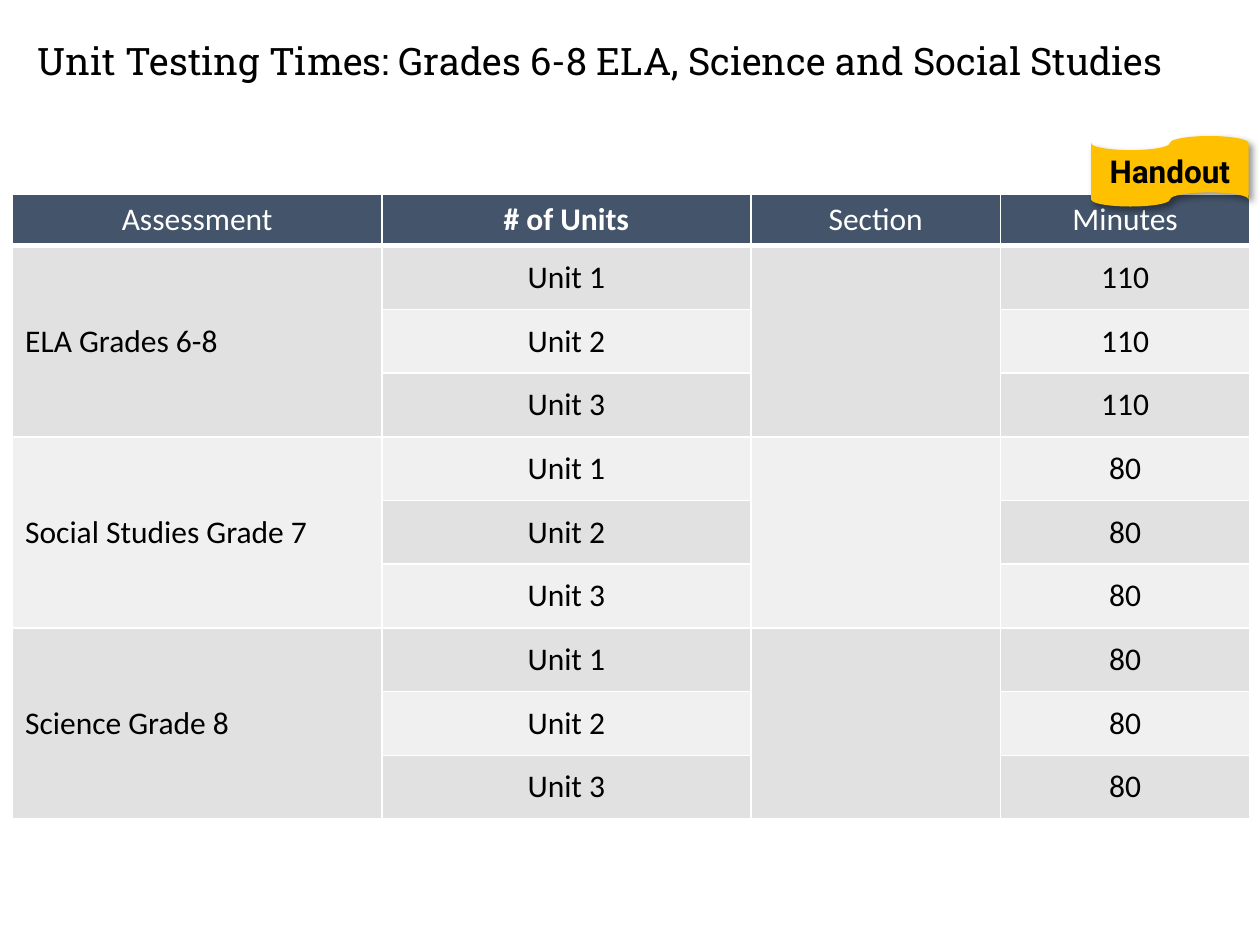
from lxml import etree
from pptx import Presentation
from pptx.dml.color import RGBColor
from pptx.enum import shapes, text
from pptx.oxml import ns
from pptx.util import Inches, Pt

BLACK, WHITE = "000000", "FFFFFF"
NAVY, AMBER = "44546A", "FFC000"
BANDS = ("E1E1E1", "F0F0F0")
CENTER, LEFT = text.PP_ALIGN.CENTER, text.PP_ALIGN.LEFT

HEADINGS = ("Assessment", "# of Units", "Section", "Minutes")
ASSESSMENTS = (
    ("ELA Grades 6-8", 110),
    ("Social Studies Grade 7", 80),
    ("Science Grade 8", 80),
)
UNITS = 3
COLUMN_WIDTHS = (2.93, 2.93, 1.98, 1.98)
HEADER_HEIGHT, UNIT_HEIGHT = 0.41, 0.5


def rgb(value):
    return RGBColor.from_string(value)


def add_xml(parent, tag, **attributes):
    element = etree.SubElement(parent, ns.qn(tag))
    for name, value in attributes.items():
        element.set(name, str(value))
    return element


def write(frame, words, align=LEFT, color=BLACK, **font_values):
    paragraph = frame.paragraphs[0]
    paragraph.alignment = align
    run = paragraph.add_run()
    run.text = words
    run.font.color.rgb = rgb(color)
    for name, value in font_values.items():
        setattr(run.font, name, value)


def set_margins(target, inset):
    for side in ("left", "right", "top", "bottom"):
        setattr(target, f"margin_{side}", Inches(inset))


def add_borders(cell, bottom_width=1):
    properties = cell._tc.get_or_add_tcPr()
    widths = {"L": 1, "R": 1, "T": 1, "B": bottom_width}
    for position, (side, width) in enumerate(widths.items()):
        line = add_xml(properties, f"a:ln{side}", w=Pt(width))
        add_xml(add_xml(line, "a:solidFill"), "a:srgbClr", val=WHITE)
        properties.insert(position, line)


def style_cell(cell, fill, bottom_width=1):
    cell.fill.solid()
    cell.fill.fore_color.rgb = rgb(fill)
    cell.vertical_anchor = text.MSO_ANCHOR.MIDDLE
    add_borders(cell, bottom_width)


def write_cell(cell, words, align=CENTER, color=BLACK, bold=False):
    write(cell.text_frame, words, align, color,
          name="Calibri", size=Pt(18), bold=bold)


def add_times_table(slide):
    row_count = 1 + UNITS * len(ASSESSMENTS)
    height = HEADER_HEIGHT + UNIT_HEIGHT * (row_count - 1)
    table = slide.shapes.add_table(
        row_count, len(HEADINGS), Inches(0.1), Inches(1.54),
        Inches(sum(COLUMN_WIDTHS)), Inches(height)).table
    for column, width in zip(table.columns, COLUMN_WIDTHS):
        column.width = Inches(width)
    for index, row in enumerate(table.rows):
        row.height = Inches(UNIT_HEIGHT if index else HEADER_HEIGHT)

    # Header row
    for column, heading in enumerate(HEADINGS):
        cell = table.cell(0, column)
        style_cell(cell, NAVY, bottom_width=3)
        write_cell(cell, heading, color=WHITE, bold=column == 1)

    # Banded unit rows
    for row in range(1, row_count):
        for column in range(len(HEADINGS)):
            cell = table.cell(row, column)
            style_cell(cell, BANDS[(row - 1) % 2])
            set_margins(cell, 0.1)

    # One group of units for each assessment
    for group, (assessment, minutes) in enumerate(ASSESSMENTS):
        first = 1 + group * UNITS
        for column in (0, 2):
            table.cell(first, column).merge(
                table.cell(first + UNITS - 1, column))
        write_cell(table.cell(first, 0), assessment, LEFT)
        for unit in range(UNITS):
            write_cell(table.cell(first + unit, 1), f"Unit {unit + 1}")
            write_cell(table.cell(first + unit, 3), str(minutes))


def add_title(slide, words):
    title = slide.shapes.add_textbox(
        Inches(0.3), Inches(0.3), Inches(9.53), Inches(0.78))
    title.text_frame.word_wrap = True
    set_margins(title.text_frame, 0)
    write(title.text_frame, words, name="Roboto Slab", size=Pt(21.6))


def add_handout_flag(slide, words):
    flag = slide.shapes.add_shape(
        shapes.MSO_SHAPE.FLOWCHART_PUNCHED_TAPE,
        Inches(8.66), Inches(1.08), Inches(1.25), Inches(0.56))
    flag.fill.solid()
    flag.fill.fore_color.rgb = rgb(AMBER)
    flag.line.fill.background()
    flag.text_frame.vertical_anchor = text.MSO_ANCHOR.MIDDLE
    write(flag.text_frame, words, CENTER,
          name="Roboto", size=Pt(18), bold=True)

    # Soft shadow to the lower right
    flag.shadow.inherit = False
    effects = flag._element.spPr.find(ns.qn("a:effectLst"))
    shadow = add_xml(effects, "a:outerShdw", blurRad=Pt(4), dist=Pt(3),
                     dir=45 * 60000, algn="tl", rotWithShape=0)
    color = add_xml(shadow, "a:srgbClr", val=BLACK)
    add_xml(color, "a:alpha", val=40000)


def main():
    deck = Presentation()
    deck.slide_width, deck.slide_height = Inches(10), Inches(7.5)
    slide = deck.slides.add_slide(deck.slide_layouts[6])
    add_times_table(slide)
    add_title(slide, "Unit Testing Times: Grades 6-8 ELA, "
                     "Science and Social Studies")
    add_handout_flag(slide, "Handout")
    deck.save("out.pptx")


if __name__ == "__main__":
    main()
